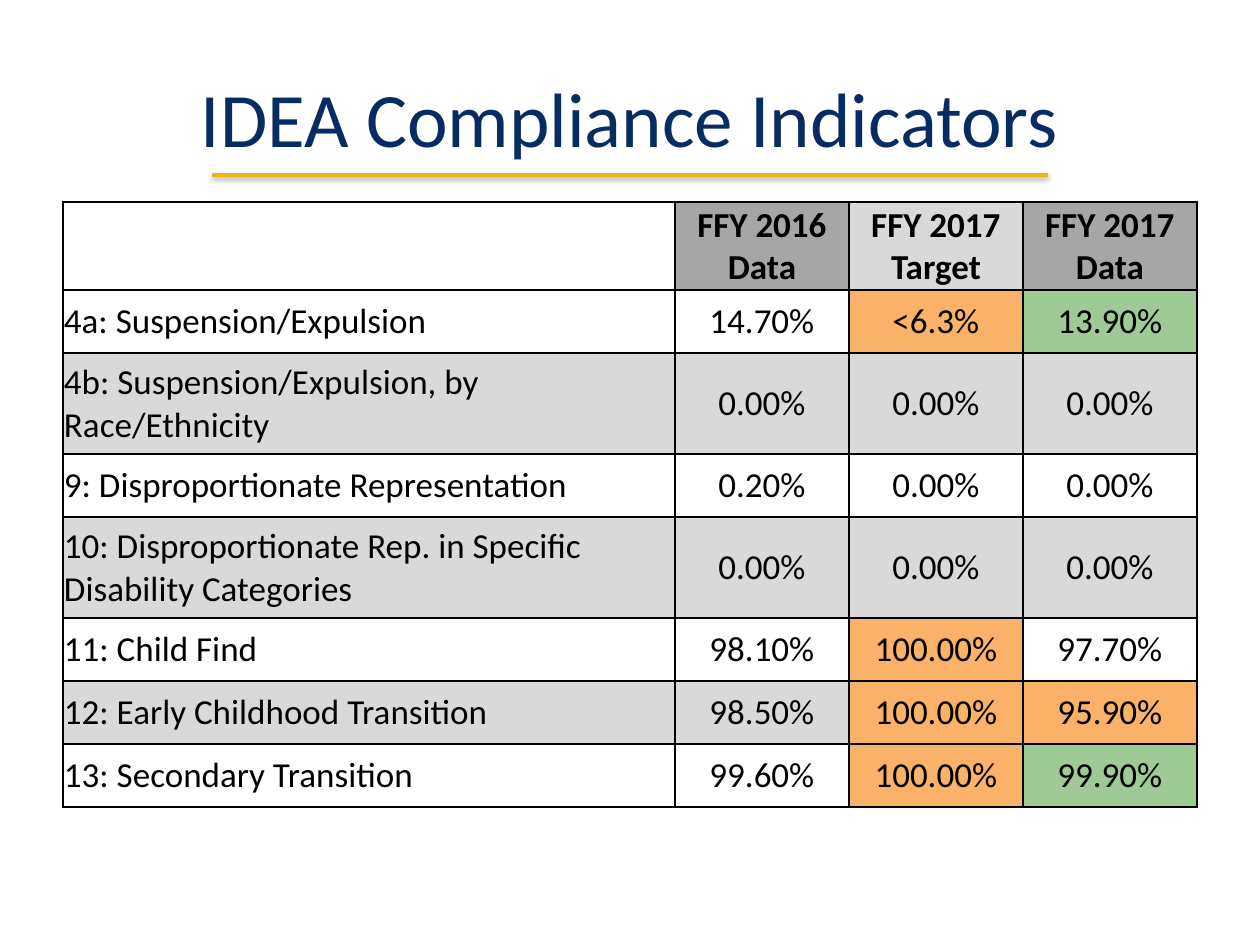
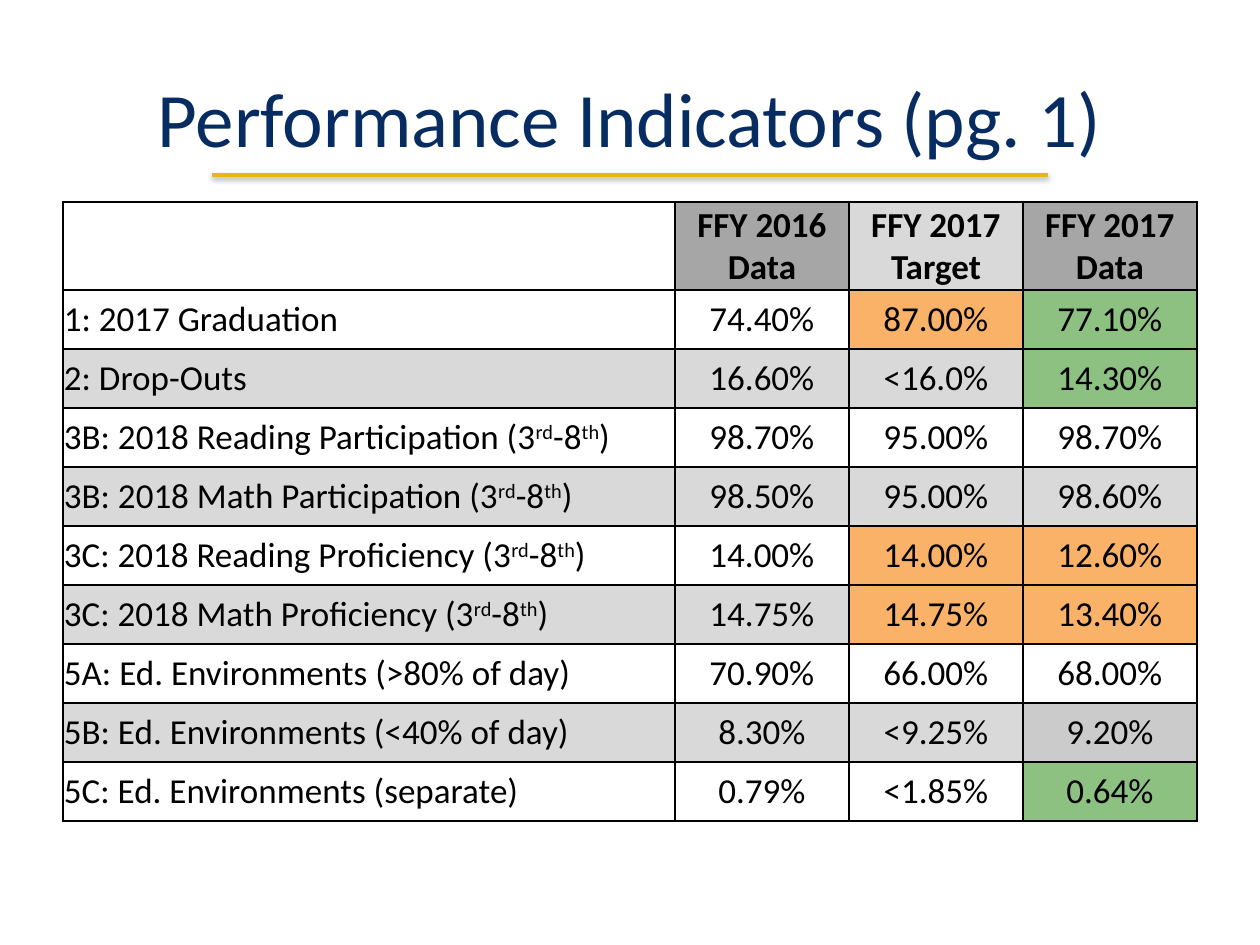
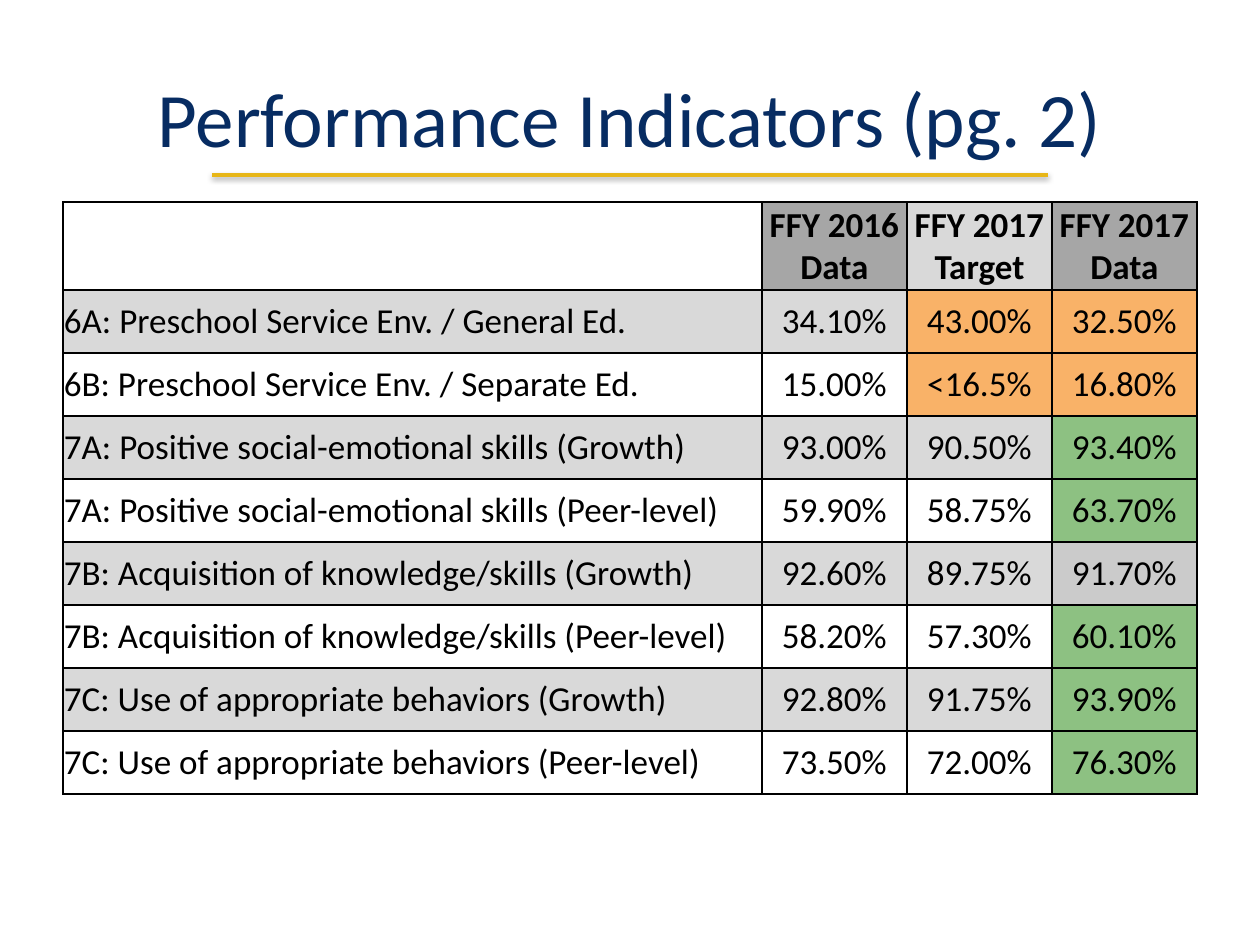
from dataclasses import dataclass
from typing import NamedTuple

from pptx import Presentation
from pptx.dml.color import RGBColor
from pptx.enum.shapes import MSO_CONNECTOR
from pptx.enum.text import MSO_ANCHOR, PP_ALIGN
from pptx.oxml import parse_xml
from pptx.oxml.ns import nsdecls
from pptx.util import Emu, Pt

PX_PER_INCH = 126
FONT = "Calibri"
NAVY = RGBColor(0x07, 0x2C, 0x62)
GOLD = RGBColor(0xE7, 0xB6, 0x17)
BLACK = RGBColor(0x00, 0x00, 0x00)
WHITE = RGBColor(0xFF, 0xFF, 0xFF)
LIGHT_GRAY = RGBColor(0xD9, 0xD9, 0xD9)
MID_GRAY = RGBColor(0xCB, 0xCB, 0xCB)
DARK_GRAY = RGBColor(0xA6, 0xA6, 0xA6)
ORANGE = RGBColor(0xF9, 0xB2, 0x68)
GREEN = RGBColor(0x8D, 0xC1, 0x82)
PALE_GREEN = RGBColor(0x9E, 0xCB, 0x95)

SLIDE_WIDTH, SLIDE_HEIGHT = 1260, 945
MARGIN = 63
CONTENT_WIDTH = SLIDE_WIDTH - 2 * MARGIN
TITLE_TOP, TITLE_HEIGHT = 38, 158
RULE_LEFT, RULE_RIGHT, RULE_Y = 212, 1048, 175
TABLE_TOP, HEADER_HEIGHT = 202, 88
HEADERS = (("", WHITE), ("FFY 2016 Data", DARK_GRAY),
           ("FFY 2017 Target", LIGHT_GRAY), ("FFY 2017 Data", DARK_GRAY))


class Indicator(NamedTuple):
    label: str  # text between carets is superscript
    previous: str
    target: str
    current: str
    target_fill: RGBColor | None = None
    current_fill: RGBColor | None = None
    height: int | None = None


@dataclass
class IndicatorSlide:
    title: str
    value_width: int
    row_height: int
    first_row_shaded: bool
    indicators: list[Indicator]


SLIDES = [
    IndicatorSlide("IDEA Compliance Indicators", 174, 63, False, [
        Indicator("4a: Suspension/Expulsion", "14.70%", "<6.3%", "13.90%", ORANGE, PALE_GREEN),
        Indicator("4b: Suspension/Expulsion, by Race/Ethnicity",
                  "0.00%", "0.00%", "0.00%", height=101),
        Indicator("9: Disproportionate Representation", "0.20%", "0.00%", "0.00%"),
        Indicator("10: Disproportionate Rep. in Specific Disability Categories",
                  "0.00%", "0.00%", "0.00%", height=101),
        Indicator("11: Child Find", "98.10%", "100.00%", "97.70%", ORANGE),
        Indicator("12: Early Childhood Transition", "98.50%", "100.00%", "95.90%", ORANGE, ORANGE),
        Indicator("13: Secondary Transition", "99.60%", "100.00%", "99.90%", ORANGE, PALE_GREEN),
    ]),
    IndicatorSlide("Performance Indicators (pg. 1)", 174, 59, False, [
        Indicator("1: 2017 Graduation", "74.40%", "87.00%", "77.10%", ORANGE, GREEN),
        Indicator("2: Drop-Outs", "16.60%", "<16.0%", "14.30%", None, GREEN),
        Indicator("3B: 2018 Reading Participation (3^rd^-8^th^)", "98.70%", "95.00%", "98.70%"),
        Indicator("3B: 2018 Math Participation (3^rd^-8^th^)", "98.50%", "95.00%", "98.60%"),
        Indicator("3C: 2018 Reading Proficiency (3^rd^-8^th^)",
                  "14.00%", "14.00%", "12.60%", ORANGE, ORANGE),
        Indicator("3C: 2018 Math Proficiency (3^rd^-8^th^)",
                  "14.75%", "14.75%", "13.40%", ORANGE, ORANGE),
        Indicator("5A: Ed. Environments (>80% of day)", "70.90%", "66.00%", "68.00%"),
        Indicator("5B: Ed. Environments (<40% of day)", "8.30%", "<9.25%", "9.20%", None, MID_GRAY),
        Indicator("5C: Ed. Environments (separate)", "0.79%", "<1.85%", "0.64%", None, GREEN),
    ]),
    IndicatorSlide("Performance Indicators (pg. 2)", 145, 63, True, [
        Indicator("6A: Preschool Service Env. / General Ed.",
                  "34.10%", "43.00%", "32.50%", ORANGE, ORANGE),
        Indicator("6B: Preschool Service Env. / Separate Ed.",
                  "15.00%", "<16.5%", "16.80%", ORANGE, ORANGE),
        Indicator("7A: Positive social-emotional skills (Growth)",
                  "93.00%", "90.50%", "93.40%", None, GREEN),
        Indicator("7A: Positive social-emotional skills (Peer-level)",
                  "59.90%", "58.75%", "63.70%", None, GREEN),
        Indicator("7B: Acquisition of knowledge/skills (Growth)",
                  "92.60%", "89.75%", "91.70%", None, MID_GRAY),
        Indicator("7B: Acquisition of knowledge/skills (Peer-level)",
                  "58.20%", "57.30%", "60.10%", None, GREEN),
        Indicator("7C: Use of appropriate behaviors (Growth)",
                  "92.80%", "91.75%", "93.90%", None, GREEN),
        Indicator("7C: Use of appropriate behaviors (Peer-level)",
                  "73.50%", "72.00%", "76.30%", None, GREEN),
    ]),
]


def px(length: int) -> Emu:
    return Emu(round(length * 914400 / PX_PER_INCH))


def add_run(paragraph, text: str, size: int, color: RGBColor, bold: bool = False):
    run = paragraph.add_run()
    run.text = text
    run.font.name = FONT
    run.font.size = Pt(size)
    run.font.bold = bold
    run.font.color.rgb = color
    return run


def add_title(slide, text: str) -> None:
    title = slide.shapes.title
    title.left, title.top = px(MARGIN), px(TITLE_TOP)
    title.width, title.height = px(CONTENT_WIDTH), px(TITLE_HEIGHT)
    title.text_frame.vertical_anchor = MSO_ANCHOR.MIDDLE
    paragraph = title.text_frame.paragraphs[0]
    paragraph.alignment = PP_ALIGN.CENTER
    add_run(paragraph, text, 44, NAVY)


def add_title_rule(slide) -> None:
    rule = slide.shapes.add_connector(
        MSO_CONNECTOR.STRAIGHT, px(RULE_LEFT), px(RULE_Y), px(RULE_RIGHT), px(RULE_Y))
    rule.line.color.rgb = GOLD
    rule.line.width = Pt(2)
    rule._element.spPr.append(parse_xml(
        f'<a:effectLst {nsdecls("a")}>'
        '<a:outerShdw blurRad="40000" dist="20000" dir="5400000" rotWithShape="0">'
        '<a:srgbClr val="000000"><a:alpha val="38000"/></a:srgbClr>'
        '</a:outerShdw></a:effectLst>'))


def add_borders(cell) -> None:
    properties = cell._tc.get_or_add_tcPr()
    for side in "LRTB":
        properties.append(parse_xml(
            f'<a:ln{side} {nsdecls("a")} w="{Pt(1)}"><a:solidFill>'
            f'<a:srgbClr val="{BLACK}"/></a:solidFill></a:ln{side}>'))


def fill_cell(cell, text: str, fill: RGBColor, centered: bool, bold: bool = False) -> None:
    add_borders(cell)
    cell.fill.solid()
    cell.fill.fore_color.rgb = fill
    cell.vertical_anchor = MSO_ANCHOR.MIDDLE
    cell.margin_left = cell.margin_right = cell.margin_top = px(1)
    cell.margin_bottom = 0
    paragraph = cell.text_frame.paragraphs[0]
    paragraph.alignment = PP_ALIGN.CENTER if centered else PP_ALIGN.LEFT
    for index, part in enumerate(text.split("^")):
        if part:
            run = add_run(paragraph, part, 20, BLACK, bold)
            if index % 2:
                run._r.get_or_add_rPr().set("baseline", "30000")


def add_indicator_table(slide, content: IndicatorSlide) -> None:
    heights = [HEADER_HEIGHT] + [row.height or content.row_height for row in content.indicators]
    widths = [CONTENT_WIDTH - 3 * content.value_width] + [content.value_width] * 3
    table = slide.shapes.add_table(
        len(heights), len(widths), px(MARGIN), px(TABLE_TOP),
        px(CONTENT_WIDTH), px(sum(heights))).table
    table.first_row = table.horz_banding = False
    for column, width in zip(table.columns, widths):
        column.width = px(width)
    for row, height in zip(table.rows, heights):
        row.height = px(height)

    for column, (text, fill) in enumerate(HEADERS):
        fill_cell(table.cell(0, column), text, fill, centered=True, bold=True)
    for index, indicator in enumerate(content.indicators):
        shaded = (index % 2 == 0) == content.first_row_shaded
        band = LIGHT_GRAY if shaded else WHITE
        fills = (band, band, indicator.target_fill or band, indicator.current_fill or band)
        for column, (text, fill) in enumerate(zip(indicator[:4], fills)):
            fill_cell(table.cell(index + 1, column), text, fill, centered=column > 0)


def main() -> None:
    presentation = Presentation()
    presentation.slide_width, presentation.slide_height = px(SLIDE_WIDTH), px(SLIDE_HEIGHT)
    title_only = presentation.slide_layouts.get_by_name("Title Only")
    for content in SLIDES:
        slide = presentation.slides.add_slide(title_only)
        add_title_rule(slide)
        add_title(slide, content.title)
        add_indicator_table(slide, content)
    presentation.save("out.pptx")


if __name__ == "__main__":
    main()
